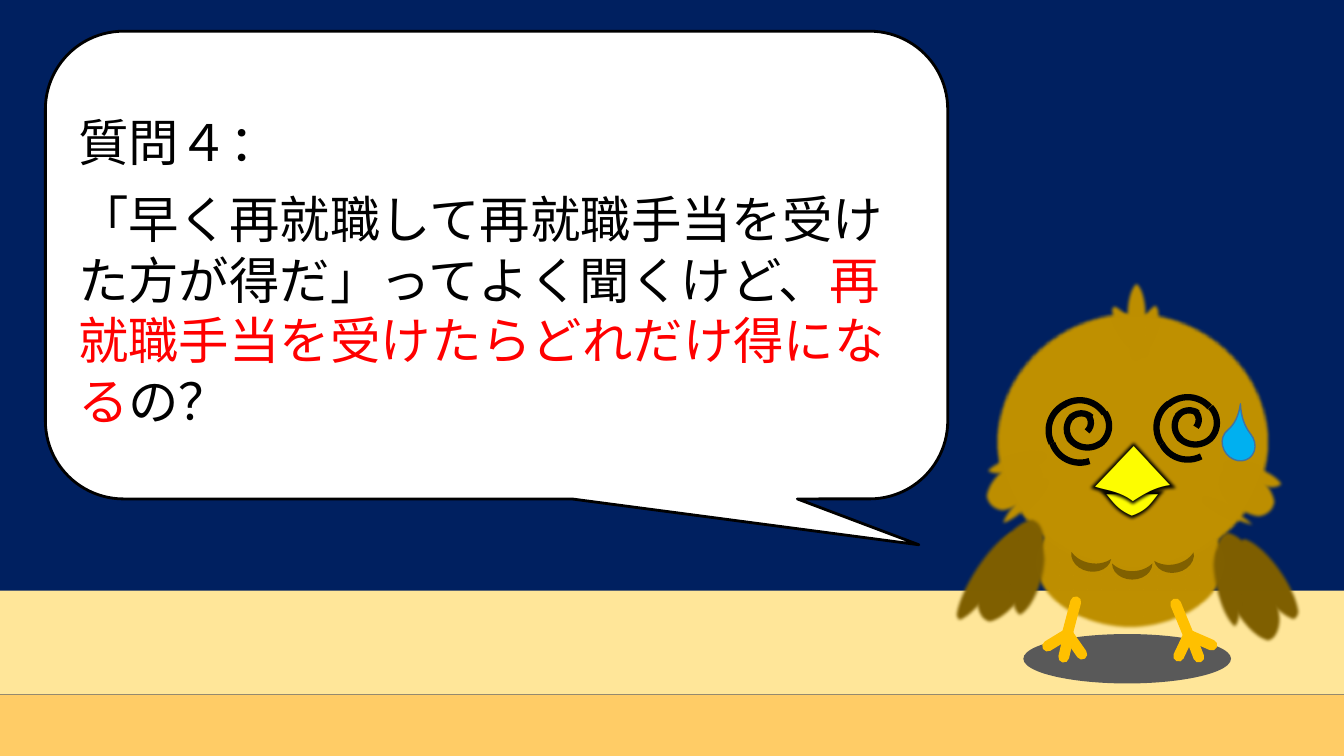
from typing import NamedTuple

from lxml.etree import SubElement
from pptx import Presentation
from pptx.dml.color import RGBColor
from pptx.enum.shapes import MSO_CONNECTOR as Connector, MSO_SHAPE as Shape
from pptx.enum.text import MSO_ANCHOR as Anchor, PP_ALIGN as Align
from pptx.oxml.ns import qn
from pptx.util import Emu, Pt

PX = 9144  # 100 px to the inch
FONT = "Noto Sans CJK JP"
NAVY, CREAM, ORANGE = "002060", "FFE699", "FFCC66"
GOLD, BROWN, LEG, YELLOW = "BF9000", "806000", "FFC000", "FFFF00"
BLACK, WHITE, RED, GREY = "000000", "FFFFFF", "FF0000", "595959"
SOFT = 2.5  # feather edge in points


class Part(NamedTuple):
    x: int
    y: int
    w: int
    h: int
    turn: float = 0
    color: str = GOLD


class Arc(NamedTuple):
    x: int
    y: int
    size: int
    turn: float


class Point(NamedTuple):
    x: float
    y: float


def px(value: float) -> Emu:
    return Emu(round(value * PX))


def rgb(color: str) -> RGBColor:
    return RGBColor.from_string(color)


def style(shape, fill: str = "", line: str = "", width: float = 0, soft: float = 0) -> None:
    shape.shadow.inherit = False
    if fill:
        shape.fill.solid()
        shape.fill.fore_color.rgb = rgb(fill)
    else:
        shape.fill.background()
    if line:
        shape.line.color.rgb = rgb(line)
        shape.line.width = Pt(width)
    else:
        shape.line.fill.background()
    if soft:
        effects = shape._element.spPr.find(qn("a:effectLst"))
        SubElement(effects, qn("a:softEdge"), rad=str(Pt(soft)))


def add_part(shapes, kind: Shape, part: Part, soft: float = 0):
    shape = shapes.add_shape(kind, px(part.x), px(part.y), px(part.w), px(part.h))
    shape.rotation = part.turn
    style(shape, part.color, soft=soft)
    return shape


def add_leg_line(shapes, start: Point, end: Point) -> None:
    leg = shapes.add_connector(Connector.STRAIGHT, px(start.x), px(start.y), px(end.x), px(end.y))
    leg.line.color.rgb = rgb(LEG)
    leg.line.width = Pt(7.75)
    leg.line._get_or_add_ln().set("cap", "rnd")
    SubElement(leg._element.spPr, qn("a:effectLst"))


def curve(a: Point, b: Point, c: Point, d: Point, steps: int = 12) -> list[Point]:
    """Points along a cubic Bezier curve, without its start."""
    points = []
    for step in range(1, steps + 1):
        t = step / steps
        weights = ((1 - t) ** 3, 3 * t * (1 - t) ** 2, 3 * t * t * (1 - t), t ** 3)
        points.append(Point(sum(k * p.x for k, p in zip(weights, (a, b, c, d))),
                            sum(k * p.y for k, p in zip(weights, (a, b, c, d)))))
    return points


def add_beak(shapes, outline: list[Point]) -> None:
    builder = shapes.build_freeform(px(outline[0].x), px(outline[0].y))
    builder.add_line_segments([(px(p.x), px(p.y)) for p in outline[1:]], close=True)
    style(builder.convert_to_shape(), YELLOW, BLACK, 5, SOFT)


def add_question(shapes) -> None:
    bubble = add_part(shapes, Shape.ROUNDED_RECTANGULAR_CALLOUT, Part(45, 31, 895, 464, 0, WHITE))
    style(bubble, WHITE, BLACK, 2)
    for index, value in enumerate((0.468, 0.598, 0.167)):
        bubble.adjustments[index] = value
    frame = bubble.text_frame
    frame.word_wrap = True
    frame.vertical_anchor = Anchor.MIDDLE
    frame.margin_top = px(16)
    paragraphs = (
        (("質問４：", BLACK),),
        (("「早く再就職して再就職手当を受けた方が得だ」ってよく聞くけど、", BLACK),
         ("再就職手当を受けたらどれだけ得になる", RED), ("の？", BLACK)),
    )
    for index, pieces in enumerate(paragraphs):
        paragraph = frame.add_paragraph() if index else frame.paragraphs[0]
        paragraph.alignment = Align.LEFT
        paragraph.line_spacing = Pt(43.2)
        paragraph.space_before = Pt(12 * index)
        for text, color in pieces:
            run = paragraph.add_run()
            run.text = text
            run.font.size = Pt(36)
            run.font.name = FONT
            run.font.color.rgb = rgb(color)
            SubElement(run._r.get_or_add_rPr(), qn("a:ea"), typeface=FONT)


GROUND = (Part(-10, 586, 1361, 103, 0, CREAM), Part(-12, 689, 1365, 61, 0, ORANGE))
CHICK_SHADOW = Part(1015, 629, 206, 49, 0, GREY)
PLUMAGE = (
    # Body and head
    Part(1024, 492, 193, 133), Part(986, 308, 274, 260),
    # Cheeks
    Part(982, 449, 45, 66, 231.7), Part(1006, 465, 20, 66, 226.1), Part(997, 427, 21, 66, 255.4),
    Part(1231, 438, 24, 66, 108.6), Part(1211, 475, 15, 66, 116), Part(1215, 455, 45, 66, 127.9),
    # Wings
    Part(976, 508, 53, 117, 26.9, BROWN), Part(962, 517, 32, 109, 32.2, BROWN),
    Part(1004, 532, 32, 83, 14, BROWN), Part(1212, 521, 52, 122, 336.1, BROWN),
    Part(1203, 539, 27, 87, 347.5, BROWN), Part(1241, 524, 36, 101, 325.3, BROWN),
    # Tuft
    Part(1115, 277, 24, 64), Part(1108, 296, 24, 64, 326.5), Part(1124, 297, 24, 64, 21.4),
)
CHEST = (Part(1073, 539, 16, 40, 280, BROWN), Part(1158, 540, 16, 40, 257.8, BROWN),
         Part(1115, 547, 16, 40, 270, BROWN))
LEGS = (
    (Point(1067, 597), Point(1058, 631)), (Point(1057, 630), Point(1039, 641)),
    (Point(1060, 630), Point(1055, 652)), (Point(1059, 629), Point(1073, 649)),
    (Point(1166, 599), Point(1180, 633)), (Point(1178, 632), Point(1169, 651)),
    (Point(1181, 631), Point(1189, 652)), (Point(1179, 630), Point(1202, 640)),
)
LOWER_BEAK = [
    Point(1156, 487),
    *curve(Point(1156, 487), Point(1145, 496), Point(1144, 508), Point(1122, 515)),
    *curve(Point(1122, 515), Point(1102, 507), Point(1100, 496), Point(1089, 487)),
]
UPPER_BEAK = [
    Point(1080, 484), Point(1124, 438), Point(1167, 484),
    *curve(Point(1167, 484), Point(1152, 484), Point(1139, 490), Point(1123, 501)),
    *curve(Point(1123, 501), Point(1109, 489), Point(1094, 490), Point(1080, 484)),
]
DIZZY_EYE = (
    Arc(1149, 398, 58, 152.7), Arc(1147, 395, 58, 235.7), Arc(1149, 394, 58, 318.9),
    Arc(1162, 397, 45, 45.9), Arc(1163, 396, 45, 137.2), Arc(1165, 405, 35, 220.8),
    Arc(1165, 407, 29, 306.2), Arc(1166, 405, 23, 39.9),
)
EYE_SHIFTS = (Arc(0, 0, 0, 0), Arc(-107, 3, 0, 8))  # right eye, left eye
SWEAT = Part(1213, 423, 31, 35, 321.1, "00B0F0")


def main() -> None:
    deck = Presentation()
    deck.slide_width, deck.slide_height = px(1333), px(750)
    slide = deck.slides.add_slide(deck.slide_layouts[6])
    slide.background.fill.solid()
    slide.background.fill.fore_color.rgb = rgb(NAVY)
    shapes = slide.shapes

    # Ground and speech bubble
    for band in GROUND:
        add_part(shapes, Shape.RECTANGLE, band)
    add_part(shapes, Shape.OVAL, CHICK_SHADOW)
    add_question(shapes)

    # Chick
    chick = shapes.add_group_shape().shapes
    for feather in PLUMAGE:
        add_part(chick, Shape.OVAL, feather, SOFT)
    for crease in CHEST:
        add_part(chick, Shape.MOON, crease).adjustments[0] = 0.524
    for start, end in LEGS:
        add_leg_line(chick, start, end)
    for outline in (LOWER_BEAK, UPPER_BEAK):
        add_beak(chick, outline)

    # Dizzy eyes and sweat drop
    for shift in EYE_SHIFTS:
        eye = shapes.add_group_shape().shapes
        for arc in DIZZY_EYE:
            box = Part(arc.x + shift.x, arc.y + shift.y, arc.size, arc.size, arc.turn + shift.turn)
            style(add_part(eye, Shape.ARC, box), line=BLACK, width=4.5)
    drop = add_part(shapes, Shape.TEAR, SWEAT)
    drop.adjustments[0] = 1.707
    style(drop, SWEAT.color, "43739E", 1)

    deck.save("out.pptx")


if __name__ == "__main__":
    main()
